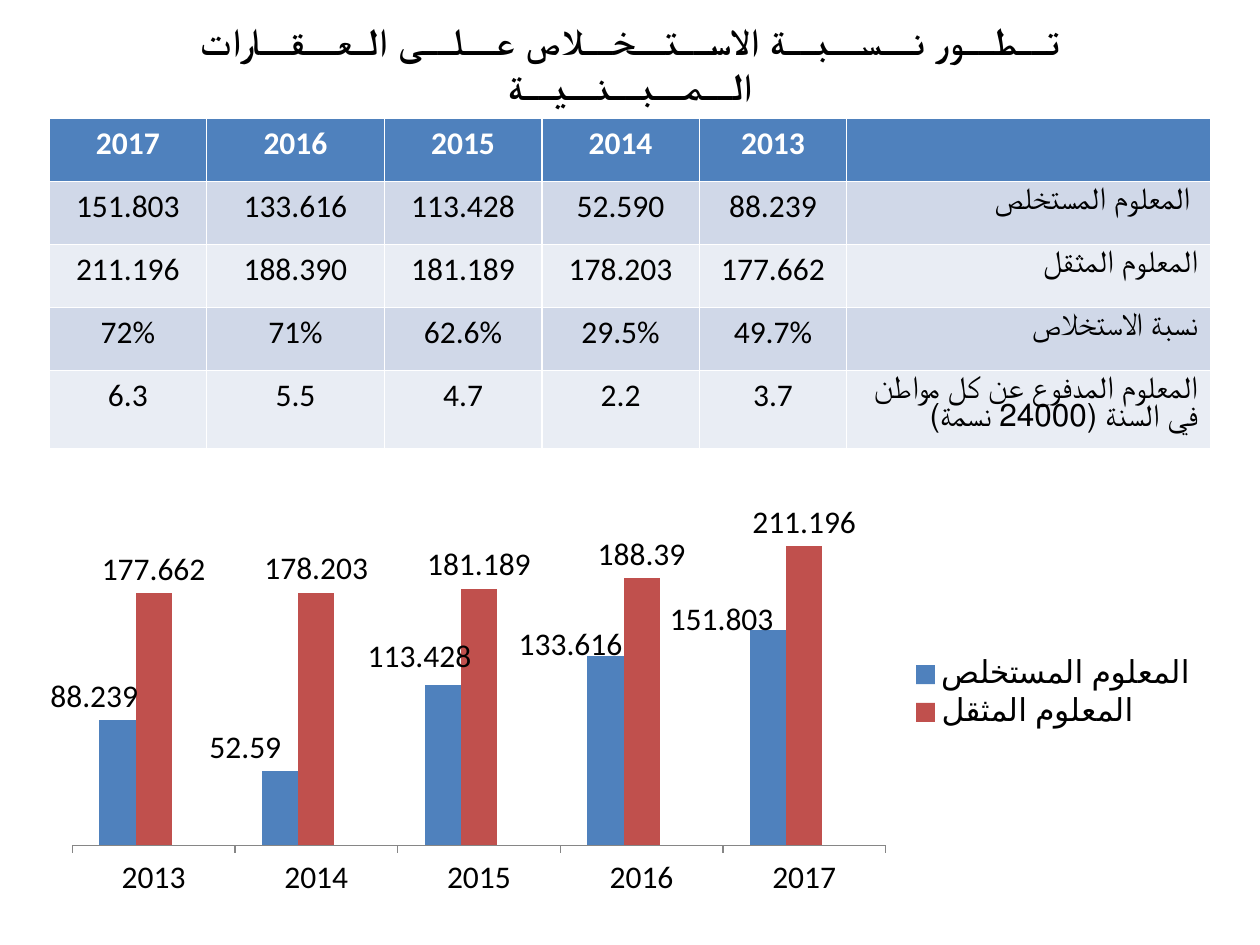
"""Build a slide on property tax collection: a yearly table above a column chart."""
from pptx import Presentation
from pptx import util as u
from pptx.chart import data as chart_data
from pptx.dml.color import RGBColor
from pptx.enum import chart as ch, text
from pptx.oxml import parse_xml
from pptx.oxml.ns import nsdecls, qn

THEME = {
    "font": "Calibri", "title_size": 21.6, "body_size": 18,
    "ink": "000000", "light": "FFFFFF", "axis": "868686",
    "header": "4F81BD", "bands": ["D0D8E8", "E9EDF4"],
    "series": ["4F81BD", "C0504D", "9BBB59"],
}

TITLE = "تــطــور نــســبــة الاســتــخــلاص عــلــى الـعــقــارات الــمــبــنــيــة"
ROWS = [
    ["2017", "2016", "2015", "2014", "2013", ""],
    ["151.803", "133.616", "113.428", "52.590", "88.239", "المعلوم المستخلص "],
    ["211.196", "188.390", "181.189", "178.203", "177.662", "المعلوم المثقل"],
    ["72%", "71%", "62.6%", "29.5%", "49.7%", "نسبة الاستخلاص"],
    ["6.3", "5.5", "4.7", "2.2", "3.7",
     "المعلوم المدفوع عن كل مواطن في السنة (24000 نسمة)"],
]
COLUMN_WIDTHS = [1.25, 1.41, 1.25, 1.25, 1.17, 2.89]
ROW_HEIGHT = 0.5
YEARS = ["2013", "2014", "2015", "2016", "2017"]
SERIES = [
    ("المعلوم المستخلص", [88.239, 52.59, 113.428, 133.616, 151.803]),
    ("المعلوم المثقل", [177.662, 178.203, 181.189, 188.39, 211.196]),
    ("Series 3", [None] * 5),
]
LABEL_OFFSETS = [(-0.02, 0), (-0.03, 0), (-0.02, -0.01), (-0.03, 0.03), (-0.04, 0.03)]
PLOT_AREA = {"x": 0.02, "y": 0.02, "w": 0.7, "h": 0.84}
LEFT, WIDTH = 0.39, 9.22


def color(value):
    return RGBColor.from_string(value)


def style(font, size, ink, bold=False):
    font.name, font.size, font.bold = THEME["font"], u.Pt(size), bold
    font.color.rgb = color(ink)


def add_title(s):
    sp = s.shapes.add_textbox(u.Inches(0.5), u.Inches(0.3), u.Inches(9), u.Inches(0.4))
    tf = sp.text_frame
    tf.word_wrap = True
    tf.vertical_anchor = text.MSO_ANCHOR.MIDDLE
    p = tf.paragraphs[0]
    p.text, p.alignment = TITLE, text.PP_ALIGN.CENTER
    style(p.font, THEME["title_size"], THEME["ink"], True)


def add_table(s):
    table = s.shapes.add_table(
        len(ROWS), len(COLUMN_WIDTHS), u.Inches(LEFT), u.Inches(0.94),
        u.Inches(WIDTH), u.Inches(ROW_HEIGHT * len(ROWS))).table
    for column, width in zip(table.columns, COLUMN_WIDTHS):
        column.width = u.Inches(width)
    for i, row in enumerate(ROWS):
        header = i == 0
        for j, value in enumerate(row):
            cell = table.cell(i, j)
            cell.fill.solid()
            cell.fill.fore_color.rgb = color(
                THEME["header"] if header else THEME["bands"][(i - 1) % 2])
            p = cell.text_frame.paragraphs[0]
            p.text, p.alignment = value, text.PP_ALIGN.CENTER
            if j == len(row) - 1:
                p.alignment, p.line_spacing = text.PP_ALIGN.RIGHT, 0.87
            style(p.font, THEME["body_size"], THEME["light" if header else "ink"], header)


def manual_layout(values, inner=False):
    target = '<c:layoutTarget val="inner"/>' if inner else ""
    modes = '<c:xMode val="edge"/><c:yMode val="edge"/>' if inner else ""
    parts = "".join(f'<c:{k} val="{v}"/>' for k, v in values.items())
    return f"<c:manualLayout>{target}{modes}{parts}</c:manualLayout>"


def offset_labels(labels):
    flags = "".join(
        f'<c:show{name} val="{int(name == "Val")}"/>'
        for name in ("LegendKey", "Val", "CatName", "SerName", "Percent", "BubbleSize"))
    for i, (x, y) in enumerate(LABEL_OFFSETS):
        layout = manual_layout({"x": x, "y": y})
        labels.insert(i, parse_xml(
            f'<c:dLbl {nsdecls("c")}><c:idx val="{i}"/><c:layout>{layout}</c:layout>'
            f'<c:dLblPos val="outEnd"/>{flags}</c:dLbl>'))


def add_chart(s):
    data = chart_data.CategoryChartData()
    data.categories = YEARS
    for name, values in SERIES:
        data.add_series(name, values)
    chart = s.shapes.add_chart(
        ch.XL_CHART_TYPE.COLUMN_CLUSTERED, u.Inches(LEFT), u.Inches(3.83),
        u.Inches(WIDTH), u.Inches(3.35), data).chart
    style(chart.font, THEME["body_size"], THEME["ink"])
    chart.has_title = False

    plot = chart.plots[0]
    plot.gap_width, plot.overlap, plot.vary_by_categories = 150, 0, False
    for series, fill in zip(plot.series, THEME["series"]):
        series.format.fill.solid()
        series.format.fill.fore_color.rgb = color(fill)
        series.data_labels.show_value = True
        series.data_labels.position = ch.XL_LABEL_POSITION.OUTSIDE_END
    root = chart.element
    offset_labels(next(root.iter(qn("c:dLbls"))))

    axis = chart.value_axis
    axis.visible = axis.has_major_gridlines = False
    axis.minimum_scale, axis.maximum_scale = 0, 250
    chart.category_axis.major_tick_mark = ch.XL_TICK_MARK.OUTSIDE
    chart.category_axis.format.line.color.rgb = color(THEME["axis"])

    chart.has_legend = True
    chart.legend.position = ch.XL_LEGEND_POSITION.RIGHT
    chart.legend.include_in_layout = False
    next(root.iter(qn("c:legendPos"))).addnext(parse_xml(
        f'<c:legendEntry {nsdecls("c")}><c:idx val="2"/><c:delete val="1"/></c:legendEntry>'))
    area = next(root.iter(qn("c:plotArea")))
    for old in area.findall(qn("c:layout")):
        area.remove(old)
    area.insert(0, parse_xml(
        f'<c:layout {nsdecls("c")}>{manual_layout(PLOT_AREA, True)}</c:layout>'))


def main():
    prs = Presentation()
    prs.slide_width, prs.slide_height = u.Inches(10), u.Inches(7.5)
    s = prs.slides.add_slide(prs.slide_layouts[6])
    add_title(s)
    add_table(s)
    add_chart(s)
    prs.save("out.pptx")


if __name__ == "__main__":
    main()
